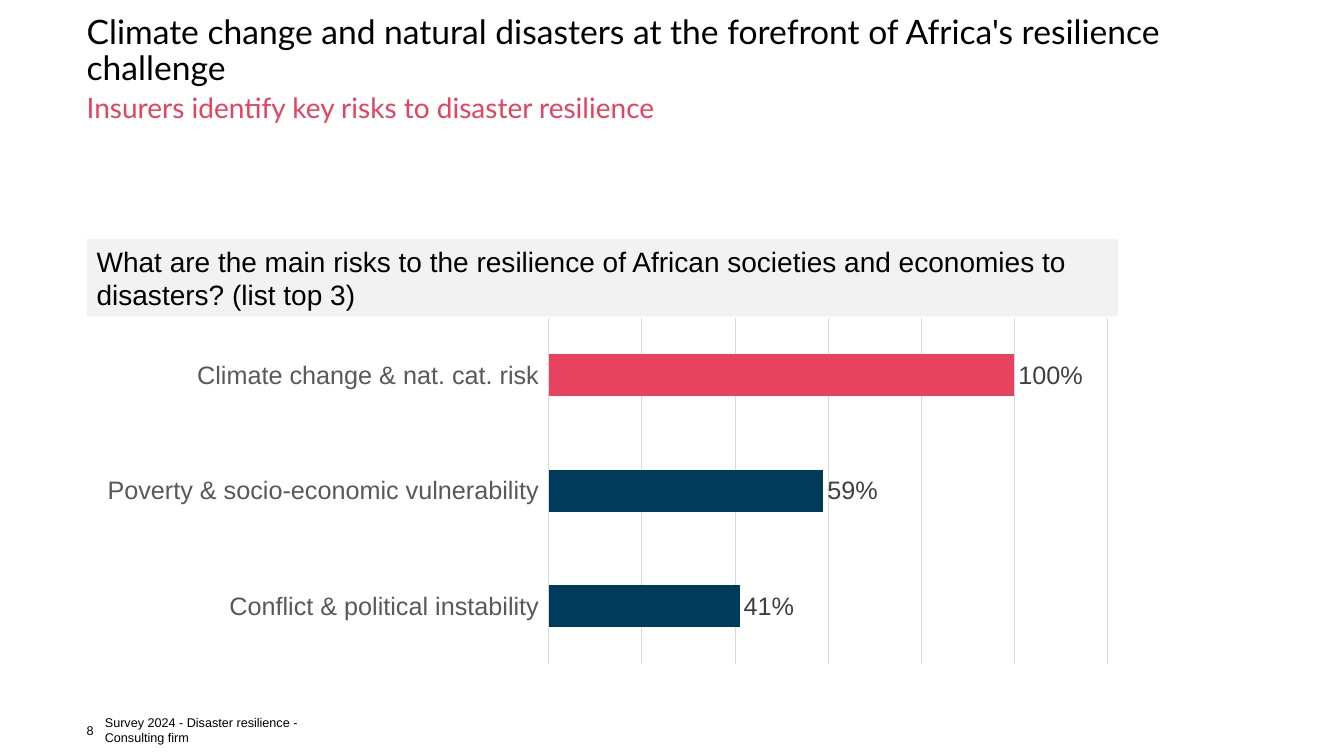
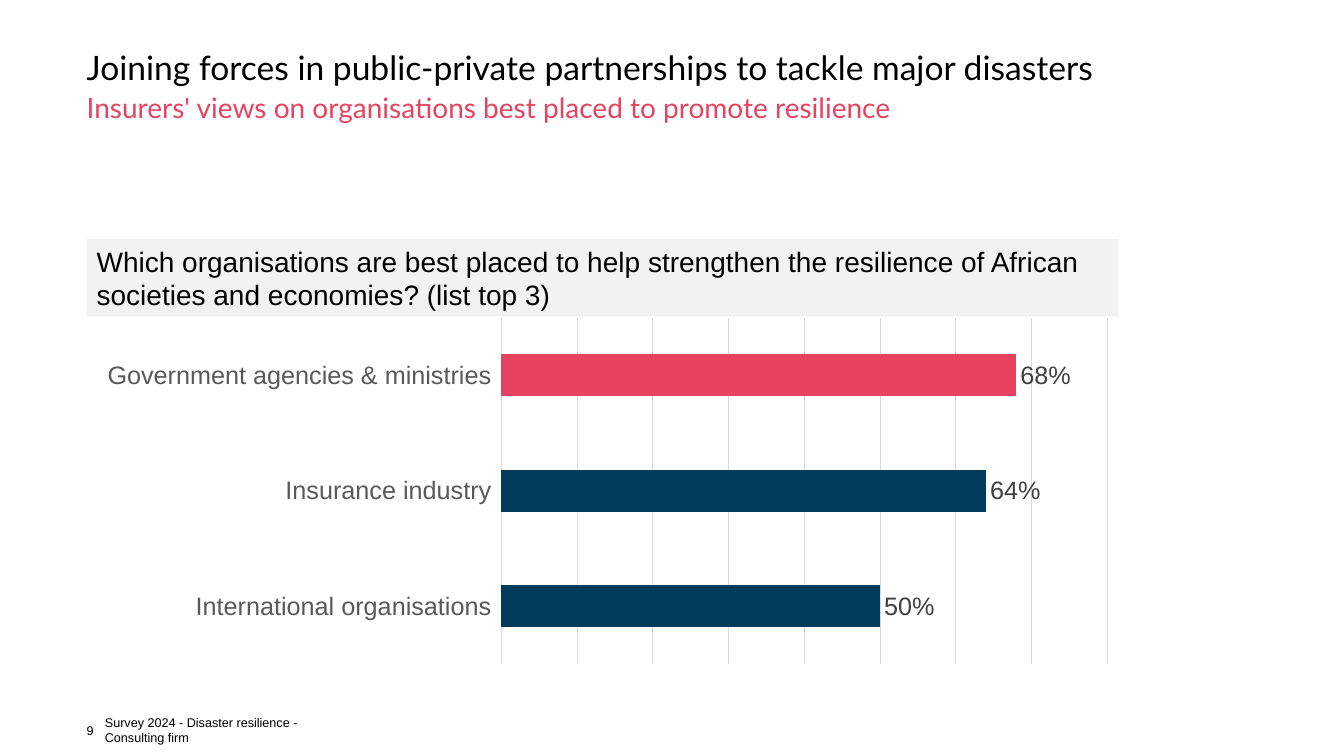
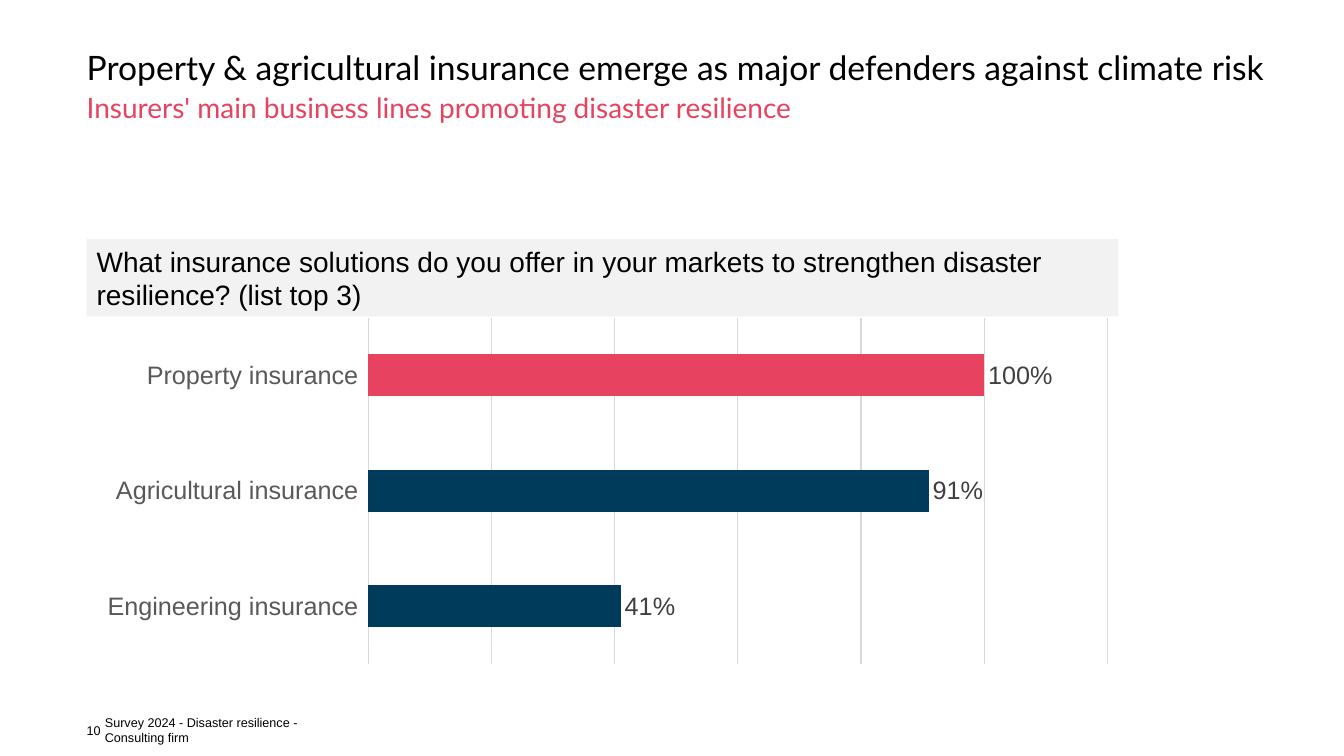
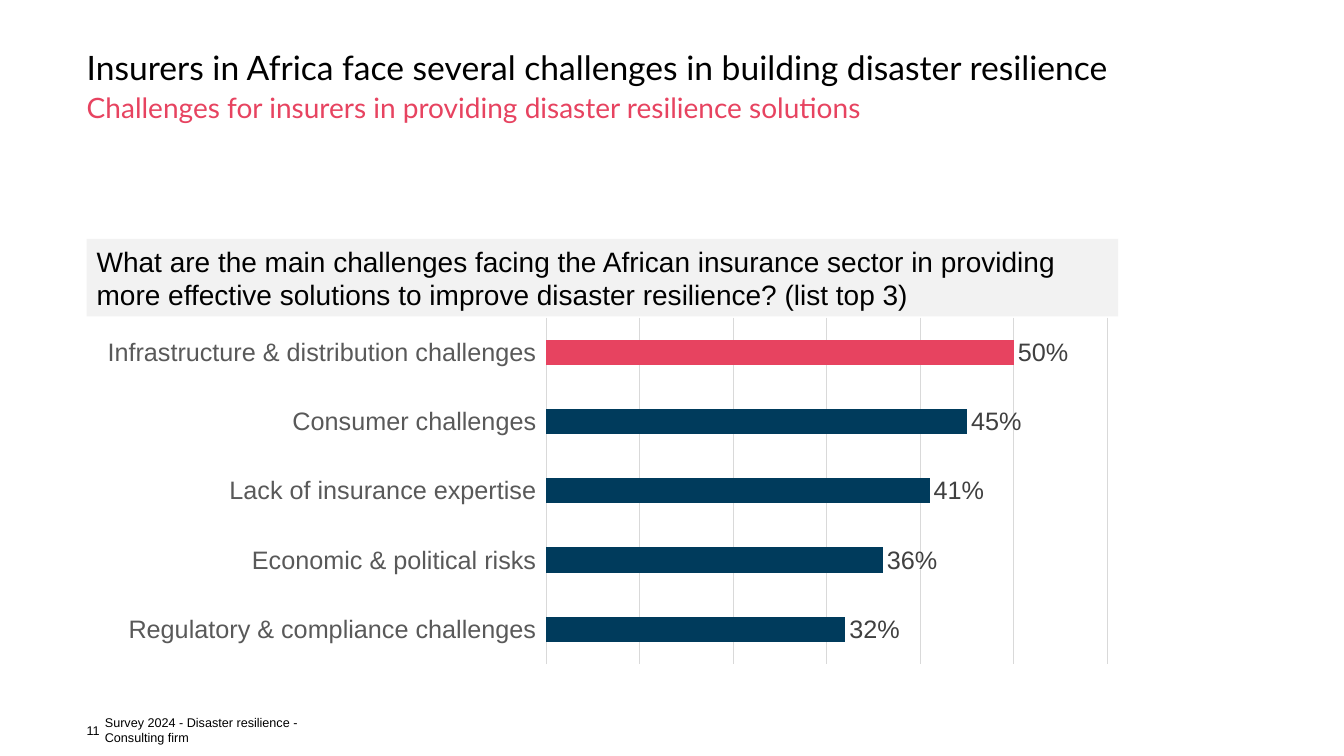
from pptx import Presentation
from pptx.chart.data import CategoryChartData
from pptx.dml.color import RGBColor
from pptx.enum.chart import XL_CHART_TYPE, XL_LABEL_POSITION, XL_TICK_LABEL_POSITION, XL_TICK_MARK
from pptx.enum.shapes import MSO_SHAPE
from pptx.enum.text import MSO_ANCHOR, PP_ALIGN
from pptx.util import Inches, Pt

BLACK = RGBColor(0x00, 0x00, 0x00)
RED = RGBColor(0xE7, 0x43, 0x60)
NAVY = RGBColor(0x00, 0x3B, 0x5C)
PALE_GREY = RGBColor(0xF2, 0xF2, 0xF2)
GRID_GREY = RGBColor(0xD9, 0xD9, 0xD9)
CATEGORY_GREY = RGBColor(0x59, 0x59, 0x59)
VALUE_GREY = RGBColor(0x40, 0x40, 0x40)

HEADING_FONT = "Lato"
BODY_FONT = "Arial"
LEFT = 0.86
HEADING_WIDTH = 11.71
FOOTER_TOP = 7.17

FOOTER = "Survey 2024 - Disaster resilience - Consulting firm"
FIRST_PAGE = 8

# Answers run from the top bar down; "axis" is the maximum and the grid step.
SURVEY = [
    {
        "title": "Climate change and natural disasters at the forefront of Africa's resilience challenge",
        "subtitle": "Insurers identify key risks to disaster resilience",
        "question": "What are the main risks to the resilience of African societies and "
                    "economies to disasters? (list top 3)",
        "answers": [
            ("Climate change & nat. cat. risk", 1),
            ("Poverty & socio-economic vulnerability", 0.59),
            ("Conflict & political instability", 0.41),
        ],
        "axis": (1.2, 0.2),
    },
    {
        "title": "Joining forces in public-private partnerships to tackle major disasters",
        "subtitle": "Insurers' views on organisations best placed to promote resilience",
        "question": "Which organisations are best placed to help strengthen the resilience of "
                    "African societies and economies? (list top 3)",
        "answers": [
            ("Government agencies & ministries", 0.68),
            ("Insurance industry", 0.64),
            ("International organisations", 0.5),
        ],
        "axis": (0.8, 0.1),
    },
    {
        "title": "Property & agricultural insurance emerge as major defenders against climate risk",
        "subtitle": "Insurers' main business lines promoting disaster resilience",
        "question": "What insurance solutions do you offer in your markets to strengthen "
                    "disaster resilience? (list top 3)",
        "answers": [
            ("Property insurance", 1),
            ("Agricultural insurance", 0.91),
            ("Engineering insurance", 0.41),
        ],
        "axis": (1.2, 0.2),
    },
    {
        "title": "Insurers in Africa face several challenges in building disaster resilience",
        "subtitle": "Challenges for insurers in providing disaster resilience solutions",
        "question": "What are the main challenges facing the African insurance sector in providing "
                    "more effective solutions to improve disaster resilience? (list top 3)",
        "answers": [
            ("Infrastructure & distribution challenges", 0.5),
            ("Consumer challenges", 0.45),
            ("Lack of insurance expertise", 0.41),
            ("Economic & political risks", 0.36),
            ("Regulatory & compliance challenges", 0.32),
        ],
        "axis": (0.6, 0.1),
    },
]


def style_font(font, size, color, name=BODY_FONT):
    font.name = name
    font.size = Pt(size)
    font.color.rgb = color


def style_line(line, color):
    line.color.rgb = color
    line.width = Pt(0.75)


def add_text(slide, text, box, size, color=BLACK, font=BODY_FONT,
             anchor=MSO_ANCHOR.TOP, wrap=True, spacing=None):
    """Add a text box without insets; box is left, top, width, height in inches."""
    frame = slide.shapes.add_textbox(*map(Inches, box)).text_frame
    frame.margin_left = frame.margin_right = frame.margin_top = frame.margin_bottom = 0
    frame.word_wrap = wrap
    frame.vertical_anchor = anchor
    paragraph = frame.paragraphs[0]
    paragraph.line_spacing = spacing
    run = paragraph.add_run()
    run.text = text
    style_font(run.font, size, color, font)


def add_headings(slide, title, subtitle):
    add_text(slide, title, (LEFT, 0.44, HEADING_WIDTH, 0.43), 24, font=HEADING_FONT,
             anchor=MSO_ANCHOR.BOTTOM, spacing=0.9)
    add_text(slide, subtitle, (LEFT, 0.94, HEADING_WIDTH, 0.43), 20, RED, HEADING_FONT,
             spacing=0.9)


def add_footer(slide, page):
    add_text(slide, str(page), (LEFT, FOOTER_TOP, 0.17, 0.15), 9, wrap=False)
    add_text(slide, FOOTER, (1.04, FOOTER_TOP, 2.01, 0.15), 9,
             anchor=MSO_ANCHOR.MIDDLE, wrap=False)


def add_answer_chart(slide, answers, axis):
    """Draw the answers as bars, with the top answer highlighted."""
    data = CategoryChartData(number_format="0%")
    bottom_up = answers[::-1]
    data.categories = [answer for answer, share in bottom_up]
    data.add_series("Series 1", [share for answer, share in bottom_up])
    chart = slide.shapes.add_chart(
        XL_CHART_TYPE.BAR_CLUSTERED, Inches(LEFT), Inches(3.08),
        Inches(10.33), Inches(3.58), data).chart
    chart.has_legend = False
    chart.has_title = False
    style_font(chart.font, 10, BLACK)

    categories = chart.category_axis
    categories.major_tick_mark = XL_TICK_MARK.NONE
    categories.tick_label_position = XL_TICK_LABEL_POSITION.LOW
    categories.has_major_gridlines = False
    style_font(categories.tick_labels.font, 18, CATEGORY_GREY)
    style_line(categories.format.line, GRID_GREY)

    values = chart.value_axis
    values.visible = False
    values.minimum_scale = 0
    values.maximum_scale, values.major_unit = axis
    values.has_major_gridlines = True
    style_line(values.major_gridlines.format.line, GRID_GREY)

    plot = chart.plots[0]
    plot.vary_by_categories = False
    plot.gap_width = 173
    plot.overlap = -32
    plot.has_data_labels = True
    labels = plot.data_labels
    labels.show_value = True
    labels.number_format = "0%"
    labels.number_format_is_linked = False
    labels.position = XL_LABEL_POSITION.OUTSIDE_END
    style_font(labels.font, 18, VALUE_GREY)

    bars = plot.series[0]
    top_answer = bars.points[len(answers) - 1]
    for part, color in ((bars, NAVY), (top_answer, RED)):
        part.format.fill.solid()
        part.format.fill.fore_color.rgb = color


def add_question(slide, question):
    band = slide.shapes.add_shape(
        MSO_SHAPE.RECTANGLE, Inches(LEFT), Inches(2.37), Inches(10.23), Inches(0.77))
    band.shadow.inherit = False
    band.fill.solid()
    band.fill.fore_color.rgb = PALE_GREY
    band.line.fill.background()
    band.text_frame.word_wrap = True
    paragraph = band.text_frame.paragraphs[0]
    paragraph.alignment = PP_ALIGN.LEFT
    run = paragraph.add_run()
    run.text = question
    style_font(run.font, 20, BLACK)


def main():
    deck = Presentation()
    deck.slide_width = Inches(13.33)
    deck.slide_height = Inches(7.5)
    for page, topic in enumerate(SURVEY, FIRST_PAGE):
        slide = deck.slides.add_slide(deck.slide_layouts[6])
        add_headings(slide, topic["title"], topic["subtitle"])
        add_footer(slide, page)
        add_answer_chart(slide, topic["answers"], topic["axis"])
        add_question(slide, topic["question"])
    deck.save("out.pptx")


if __name__ == "__main__":
    main()
